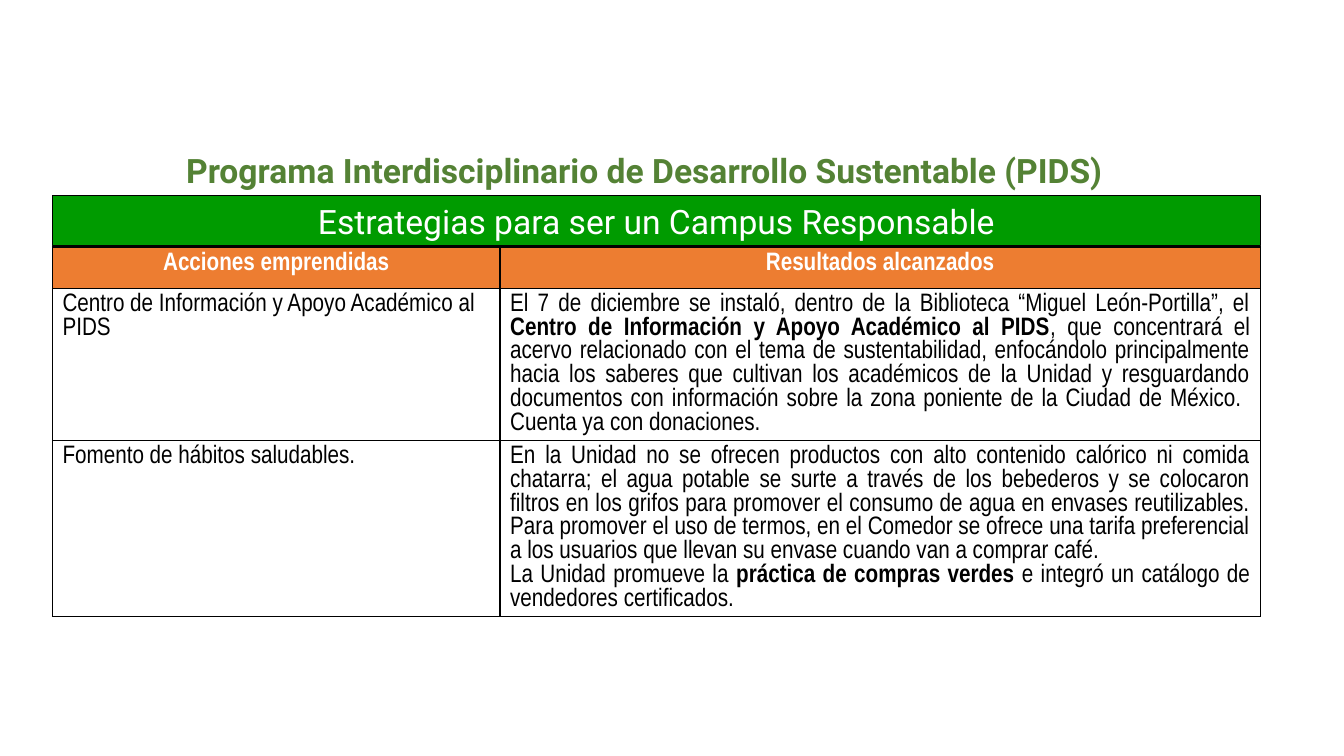
from lxml import etree
from pptx import Presentation
from pptx.dml.color import RGBColor
from pptx.enum.shapes import MSO_SHAPE
from pptx.enum.text import MSO_ANCHOR, PP_ALIGN
from pptx.oxml.ns import qn
from pptx.util import Inches, Pt

RECTANGLE = MSO_SHAPE.RECTANGLE
MIDDLE = MSO_ANCHOR.MIDDLE
LEFT, CENTER, JUSTIFY = PP_ALIGN.LEFT, PP_ALIGN.CENTER, PP_ALIGN.JUSTIFY

BLACK, WHITE = "000000", "FFFFFF"
GREEN, DARK_GREEN, ORANGE = "009B00", "548235", "ED7D31"

MARGIN = 0.52
COLUMNS = (4.44, 7.54)
ROW_HEIGHT = 0.41
BAND_TOP, BAND_HEIGHT = 1.94, 0.5


def color(hex_code):
    return RGBColor.from_string(hex_code)


def write(frame, paragraphs, align, font, size, ink):
    """Fill a text frame; each paragraph is a list of (text, bold) runs."""
    frame.word_wrap = True
    for i, runs in enumerate(paragraphs):
        paragraph = frame.paragraphs[0] if i == 0 else frame.add_paragraph()
        paragraph.alignment = align
        for text, bold in runs:
            run = paragraph.add_run()
            run.text = text
            run.font.name = font
            run.font.size = Pt(size)
            run.font.bold = bold
            run.font.color.rgb = color(ink)


rows = [
    (
        [[("Acciones emprendidas", True)]],
        [[("Resultados alcanzados", True)]],
    ),
    (
        [[("Centro de Información y Apoyo Académico al PIDS", False)]],
        [[
            ("El 7 de diciembre se instaló, dentro de la Biblioteca “Miguel León-Portilla”, el ", False),
            ("Centro de Información y Apoyo Académico al PIDS", True),
            (", que concentrará el acervo relacionado con el tema de sustentabilidad, "
             "enfocándolo principalmente hacia los saberes que cultivan los académicos "
             "de la Unidad y resguardando documentos con información sobre la zona "
             "poniente de la Ciudad de México.  Cuenta ya con donaciones.", False),
        ]],
    ),
    (
        [[("Fomento de hábitos saludables.", False)]],
        [
            [("En la Unidad no se ofrecen productos con alto contenido calórico ni comida "
              "chatarra; el agua potable se surte a través de los bebederos y se colocaron "
              "filtros en los grifos para promover el consumo de agua en envases "
              "reutilizables. Para promover el uso de termos, en el Comedor se ofrece una "
              "tarifa preferencial a los usuarios que llevan su envase cuando van a "
              "comprar café.", False)],
            [("La Unidad promueve la ", False),
             ("práctica de compras verdes ", True),
             ("e integró un catálogo de vendedores certificados.", False)],
        ],
    ),
]

prs = Presentation()
prs.slide_width, prs.slide_height = Inches(13.33), Inches(7.5)
slide = prs.slides.add_slide(prs.slide_layouts[6])
table_width = sum(COLUMNS)

# Table of actions and results
table = slide.shapes.add_table(
    len(rows), len(COLUMNS), Inches(MARGIN), Inches(BAND_TOP + BAND_HEIGHT + 0.01),
    Inches(table_width), Inches(ROW_HEIGHT * len(rows))).table
table.horz_banding = False
for column, width in zip(table.columns, COLUMNS):
    column.width = Inches(width)

for r, row in enumerate(rows):
    for c, paragraphs in enumerate(row):
        cell = table.cell(r, c)
        properties = cell._tc.get_or_add_tcPr()
        for side in ("a:lnL", "a:lnR", "a:lnT", "a:lnB"):
            border = etree.SubElement(properties, qn(side), w=str(Pt(1)))
            border_fill = etree.SubElement(border, qn("a:solidFill"))
            etree.SubElement(border_fill, qn("a:srgbClr"), val=BLACK)
        if r == 0:
            cell.fill.solid()
            cell.fill.fore_color.rgb = color(ORANGE)
            align, ink = CENTER, WHITE
        else:
            cell.fill.background()
            align, ink = (LEFT, JUSTIFY)[c], BLACK
        write(cell.text_frame, paragraphs, align, "Arial Narrow", 18, ink)

# Green band above the table
band = slide.shapes.add_shape(
    RECTANGLE, Inches(MARGIN), Inches(BAND_TOP), Inches(table_width), Inches(BAND_HEIGHT))
band.shadow.inherit = False
band.fill.solid()
band.fill.fore_color.rgb = color(GREEN)
band.line.color.rgb = color(BLACK)
band.line.width = Pt(0.75)
band.text_frame.vertical_anchor = MIDDLE
write(band.text_frame, [[("Estrategias para ser un Campus Responsable", False)]],
      CENTER, "Roboto", 24, WHITE)

# Programme title
title = slide.shapes.add_textbox(
    Inches(0.84), Inches(BAND_TOP - BAND_HEIGHT), Inches(11.1), Inches(BAND_HEIGHT))
write(title.text_frame,
      [[("Programa Interdisciplinario de Desarrollo Sustentable (PIDS)", True)]],
      CENTER, "Roboto", 24, DARK_GREEN)

prs.save("out.pptx")
